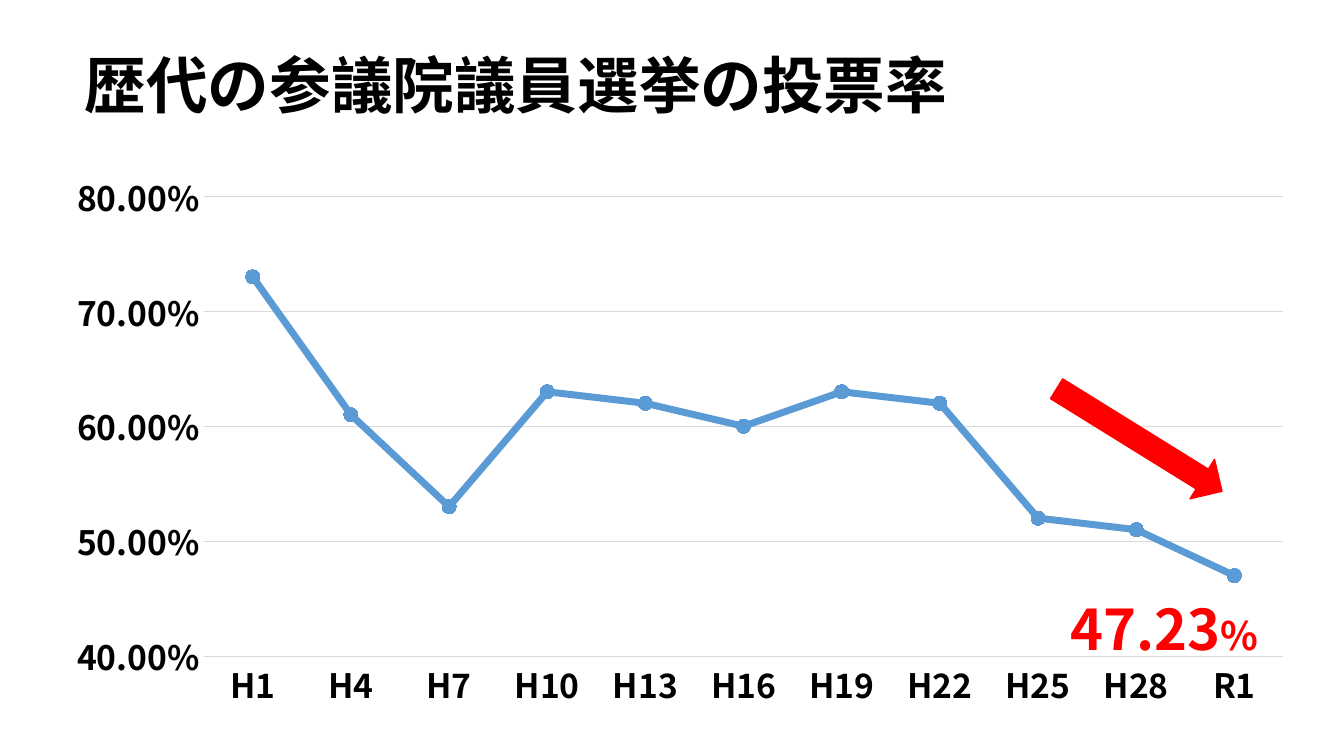
"""Builds a slide with a line chart of upper house election turnout."""
import pptx
import pptx.chart.data
import pptx.dml.color
import pptx.enum.chart
import pptx.enum.shapes
import pptx.enum.text
import pptx.oxml
import pptx.oxml.ns
import pptx.util

BLACK = pptx.dml.color.RGBColor(0x00, 0x00, 0x00)
RED = pptx.dml.color.RGBColor(0xFF, 0x00, 0x00)
BLUE = pptx.dml.color.RGBColor(0x5B, 0x9B, 0xD5)
GRID = pptx.dml.color.RGBColor(0xD9, 0xD9, 0xD9)

TURNOUT = {
    "H1": 0.73, "H4": 0.61, "H7": 0.53, "H10": 0.63, "H13": 0.62, "H16": 0.6,
    "H19": 0.63, "H22": 0.62, "H25": 0.52, "H28": 0.51, "R1": 0.47,
}


class SlideBuilder:
    FONT = "Noto Sans CJK JP"
    SCALE = 9144

    def __init__(self, prs):
        self.slide = prs.slides.add_slide(prs.slide_layouts[5])

    @classmethod
    def px(cls, *lengths):
        return [pptx.util.Emu(n * cls.SCALE) for n in lengths]

    def style(self, font, size, color=BLACK, bold=True):
        font.name = self.FONT
        font.size = pptx.util.Pt(size)
        font.bold = bold
        font.color.rgb = color

    def add_run(self, p, text, size, color):
        r = p.add_run()
        r.text = text
        self.style(r.font, size, color)
        latin = r.font._element.find(pptx.oxml.ns.qn("a:latin"))
        ea = pptx.oxml.parse_xml(
            f'<a:ea {pptx.oxml.ns.nsdecls("a")} typeface="{self.FONT}"/>')
        latin.addnext(ea)

    def title(self, box, text):
        sp = self.slide.shapes.title
        sp.left, sp.top, sp.width, sp.height = self.px(*box)
        tf = sp.text_frame
        tf.word_wrap = True
        tf.vertical_anchor = pptx.enum.text.MSO_ANCHOR.MIDDLE
        p = tf.paragraphs[0]
        p.alignment = pptx.enum.text.PP_ALIGN.LEFT
        p.line_spacing = 0.9
        self.add_run(p, text, 44, BLACK)

    def text(self, box, runs, color):
        tf = self.slide.shapes.add_textbox(*self.px(*box)).text_frame
        tf.word_wrap = True
        tf.auto_size = pptx.enum.text.MSO_AUTO_SIZE.SHAPE_TO_FIT_TEXT
        p = tf.paragraphs[0]
        p.alignment = pptx.enum.text.PP_ALIGN.CENTER
        for text, size in runs:
            self.add_run(p, text, size, color)

    def arrow(self, box, rotation, color):
        sp = self.slide.shapes.add_shape(
            pptx.enum.shapes.MSO_SHAPE.DOWN_ARROW, *self.px(*box))
        sp.rotation = rotation
        sp.shadow.inherit = False
        sp.fill.solid()
        sp.fill.fore_color.rgb = color
        sp.line.color.rgb = color
        sp.line.width = pptx.util.Pt(1)

    def line_chart(self, box, values, plot_box):
        data = pptx.chart.data.CategoryChartData(number_format="0.00%")
        data.categories = list(values)
        data.add_series("投票率", list(values.values()))
        chart = self.slide.shapes.add_chart(
            pptx.enum.chart.XL_CHART_TYPE.LINE_MARKERS, *self.px(*box), data).chart
        chart.has_legend = False
        chart.has_title = False
        self.style(chart.font, 10, bold=False)
        self.axes(chart)
        self.series(chart.plots[0])
        self.place_plot(chart, box, plot_box)

    def axes(self, chart):
        cat, val = chart.category_axis, chart.value_axis
        for axis in (cat, val):
            axis.major_tick_mark = pptx.enum.chart.XL_TICK_MARK.NONE
            axis.minor_tick_mark = pptx.enum.chart.XL_TICK_MARK.NONE
            self.style(axis.tick_labels.font, 24)
        val.minimum_scale, val.maximum_scale, val.major_unit = 0.4, 0.8, 0.1
        val.tick_labels.number_format = "0.00%"
        val.tick_labels.number_format_is_linked = False
        val.format.line.fill.background()
        for line in (cat.format.line, val.major_gridlines.format.line):
            line.color.rgb = GRID
            line.width = pptx.util.Pt(0.75)

    def series(self, plot):
        plot.vary_by_categories = False
        ser = plot.series[0]
        ser.smooth = False
        ser.format.line.color.rgb = BLUE
        ser.format.line.width = pptx.util.Pt(5)
        ser.marker.style = pptx.enum.chart.XL_MARKER_STYLE.CIRCLE
        ser.marker.size = 10
        ser.marker.format.fill.solid()
        ser.marker.format.fill.fore_color.rgb = BLUE
        ser.marker.format.line.color.rgb = BLUE

    def place_plot(self, chart, box, plot_box):
        left, top, width, height = box
        x, y, w, h = plot_box
        shares = ((x - left) / width, (y - top) / height, w / width, h / height)
        area = chart._chartSpace.chart.plotArea
        for old in area.findall(pptx.oxml.ns.qn("c:layout")):
            area.remove(old)
        sizes = "".join(f'<c:{k} val="{v}"/>' for k, v in zip("xywh", shares))
        area.insert(0, pptx.oxml.parse_xml(
            f'<c:layout {pptx.oxml.ns.nsdecls("c")}><c:manualLayout>'
            '<c:layoutTarget val="inner"/><c:xMode val="edge"/><c:yMode val="edge"/>'
            f'{sizes}</c:manualLayout></c:layout>'))


def main():
    prs = pptx.Presentation()
    prs.slide_width, prs.slide_height = SlideBuilder.px(1333, 750)
    s = SlideBuilder(prs)
    s.title((74, 15, 1150, 145), "歴代の参議院議員選挙の投票率")
    s.line_chart((52, 160, 1245, 553), TURNOUT, (202, 195, 1071, 456))
    s.text((1036, 585, 238, 77), [("47.23", 40), ("%", 28)], RED)
    s.arrow((1107, 340, 46, 193), 301.8, RED)
    prs.save("out.pptx")


if __name__ == "__main__":
    main()
